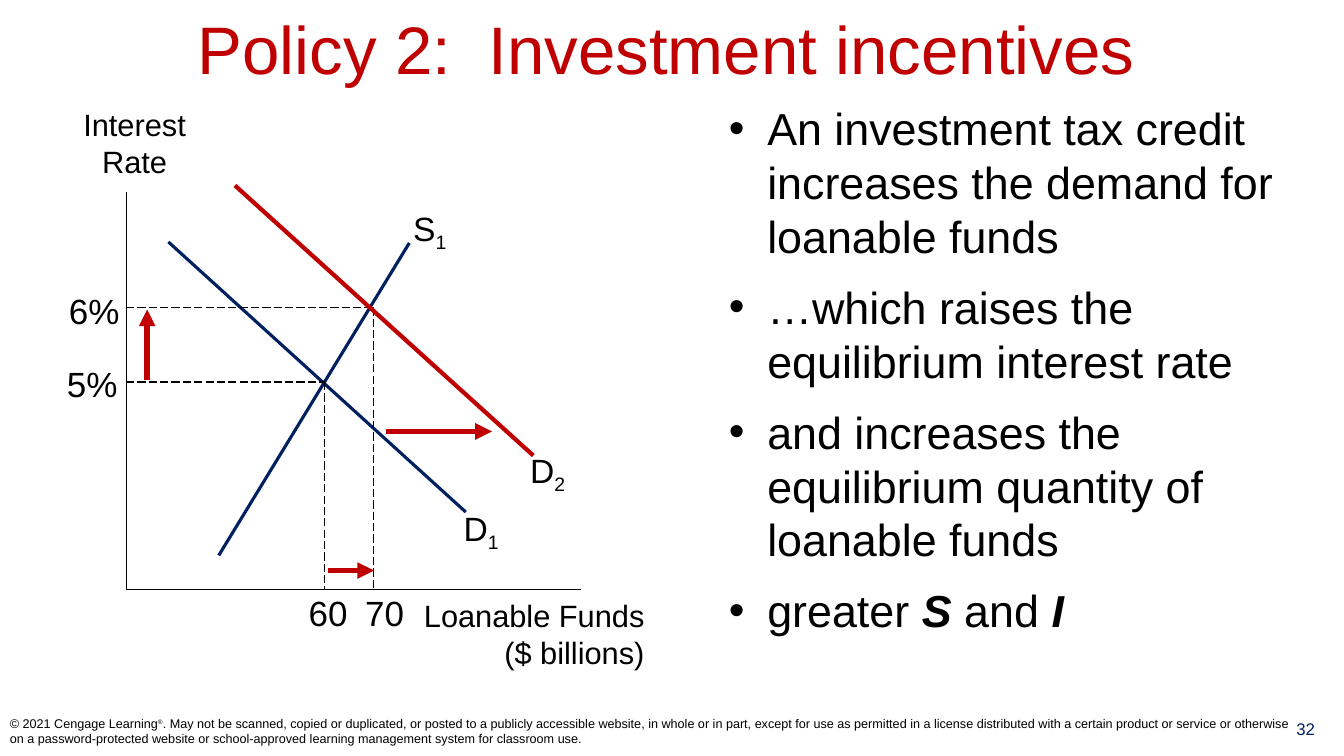
import pptx
import pptx.util
import pptx.dml.color
import pptx.enum.dml
import pptx.enum.shapes
import pptx.enum.text
import pptx.oxml.ns
import lxml.etree

Inches = pptx.util.Inches
Pt = pptx.util.Pt
ALIGN = pptx.enum.text.PP_ALIGN
ANCHOR = pptx.enum.text.MSO_ANCHOR
COLORS = {"red": "C00000", "navy": "002060", "black": "000000"}
AXIS_X, AXIS_Y = 1.25, 5.85


def rgb(name):
    return pptx.dml.color.RGBColor.from_string(COLORS[name])


def add_xml(parent, tag, **attrs):
    el = lxml.etree.SubElement(parent, pptx.oxml.ns.qn(tag))
    for key, value in attrs.items():
        el.set(key, value)


def place(sp, box):
    sp.left, sp.top, sp.width, sp.height = (Inches(v) for v in box)


def style(p, size, color="black", align=ALIGN.LEFT):
    p.alignment = align
    p.font.name = "Arial"
    p.font.size = Pt(size)
    p.font.color.rgb = rgb(color)


def add_label(s, text, box, size, color="black", align=ALIGN.CENTER, sub=None, side=0.1):
    sp = s.shapes.add_textbox(*(Inches(v) for v in box))
    tf = sp.text_frame
    tf.word_wrap = True
    tf.margin_left = tf.margin_right = Inches(side)
    p = tf.paragraphs[0]
    p.text = text
    style(p, size, color, align)
    if sub:
        r = p.add_run()
        r.text = sub
        r.font._element.set("baseline", "-25000")


def add_line(s, start, end, color="black", width=0.75, dashed=False, arrow=False):
    points = (Inches(v) for v in (*start, *end))
    sp = s.shapes.add_connector(pptx.enum.shapes.MSO_CONNECTOR.STRAIGHT, *points)
    sp.line.color.rgb = rgb(color)
    sp.line.width = Pt(width)
    if dashed:
        sp.line.dash_style = pptx.enum.dml.MSO_LINE.LONG_DASH
    if arrow:
        add_xml(sp.line._get_or_add_ln(), "a:tailEnd", type="triangle")
    add_xml(sp._element.spPr, "a:effectLst")


def add_curve(s, start, end, name, number, label_at, color="navy", width=2.25):
    add_line(s, start, end, color, width)
    add_label(s, name, (*label_at, 0.61, 0.5), 24, align=ALIGN.LEFT, sub=number)


def add_equilibrium(s, x, y, rate, rate_at, amount, amount_left):
    add_line(s, (AXIS_X, y), (x, y), dashed=True)
    add_line(s, (x, y), (x, AXIS_Y), dashed=True)
    add_label(s, rate, (*rate_at, 0.67, 0.52), 25, side=0)
    add_label(s, amount, (amount_left, 5.82, 0.67, 0.52), 25, side=0)


def add_title(s):
    sp = s.shapes.title
    place(sp, (0.11, 0.11, 13, 0.72))
    tf = sp.text_frame
    tf.auto_size = pptx.enum.text.MSO_AUTO_SIZE.NONE
    tf.word_wrap = False
    tf.vertical_anchor = ANCHOR.MIDDLE
    p = tf.paragraphs[0]
    p.text = "Policy 2:  Investment incentives"
    style(p, 48, "red", ALIGN.CENTER)


def add_bullets(s):
    sp = s.placeholders[1]
    place(sp, (7.13, 0.95, 5.86, 5.75))
    tf = sp.text_frame
    tf.auto_size = pptx.enum.text.MSO_AUTO_SIZE.NONE
    items = [
        ["An investment tax credit increases the demand for loanable funds"],
        ["…which raises the equilibrium interest rate"],
        ["and increases the equilibrium quantity of loanable funds"],
        ["greater ", "S", " and ", "I"],
    ]
    for i, parts in enumerate(items):
        p = tf.paragraphs[0] if i == 0 else tf.add_paragraph()
        pPr = p._p.get_or_add_pPr()
        pPr.set("marL", str(Inches(0.38)))
        pPr.set("indent", str(-Inches(0.38)))
        add_xml(pPr, "a:buFont", typeface="Arial")
        add_xml(pPr, "a:buChar", char="•")
        p.space_before = Pt(6.4 if i else 0)
        p.space_after = Pt(6)
        style(p, 32)
        for j, part in enumerate(parts):
            r = p.add_run()
            r.text = part
            if j % 2:
                r.font.bold = r.font.italic = True


def add_graph(s):
    add_line(s, (AXIS_X, 1.9), (AXIS_X, AXIS_Y))
    add_line(s, (AXIS_X, AXIS_Y), (5.76, AXIS_Y))
    add_label(s, "Interest\vRate", (0.58, 1, 1.51, 0.83), 22)
    add_label(s, "Loanable Funds ($ billions)", (3.87, 5.87, 2.62, 0.83), 22, align=ALIGN.RIGHT)
    add_curve(s, (1.67, 2.4), (4.62, 5.08), "D", "1", (4.5, 4.99))
    add_curve(s, (2.17, 5.51), (4.06, 2.41), "S", "1", (4, 2.01))
    add_equilibrium(s, 3.22, 3.79, "5%", (0.58, 3.55), "60", 2.92)
    add_equilibrium(s, 3.7, 3.05, "6%", (0.6, 2.82), "70", 3.48)
    for start, end in [((3.83, 4.28), (4.88, 4.28)),
                       ((1.46, 3.77), (1.46, 3.07)),
                       ((3.25, 5.66), (3.71, 5.66))]:
        add_line(s, start, end, "red", 4, arrow=True)
    add_curve(s, (2.33, 1.84), (5.29, 4.52), "D", "2", (5.16, 4.41), "red", 3)


def add_copyright(s):
    sp = s.shapes.add_textbox(Inches(0), Inches(7), Inches(12.92), Inches(0.5))
    tf = sp.text_frame
    tf.word_wrap = True
    tf.vertical_anchor = ANCHOR.MIDDLE
    p = tf.paragraphs[0]
    style(p, 9)
    p.add_run().text = "© 2021 Cengage Learning"
    r = p.add_run()
    r.text = "®"
    r.font.size = Pt(8)
    r.font._element.set("baseline", "30000")
    p.add_run().text = (
        ". May not be scanned, copied or duplicated, or posted to a publicly accessible website, "
        "in whole or in part, except for use as permitted in a license distributed with a certain "
        "product or service or otherwise on a password-protected website or school-approved "
        "learning management system for classroom use.")


def main():
    prs = pptx.Presentation()
    prs.slide_width, prs.slide_height = Inches(13.33), Inches(7.5)
    s = prs.slides.add_slide(prs.slide_layouts[1])
    add_title(s)
    add_label(s, "32", (12.57, 7.08, 0.76, 0.41), 12, "navy")
    add_bullets(s)
    add_graph(s)
    add_copyright(s)
    prs.save("out.pptx")


if __name__ == "__main__":
    main()
